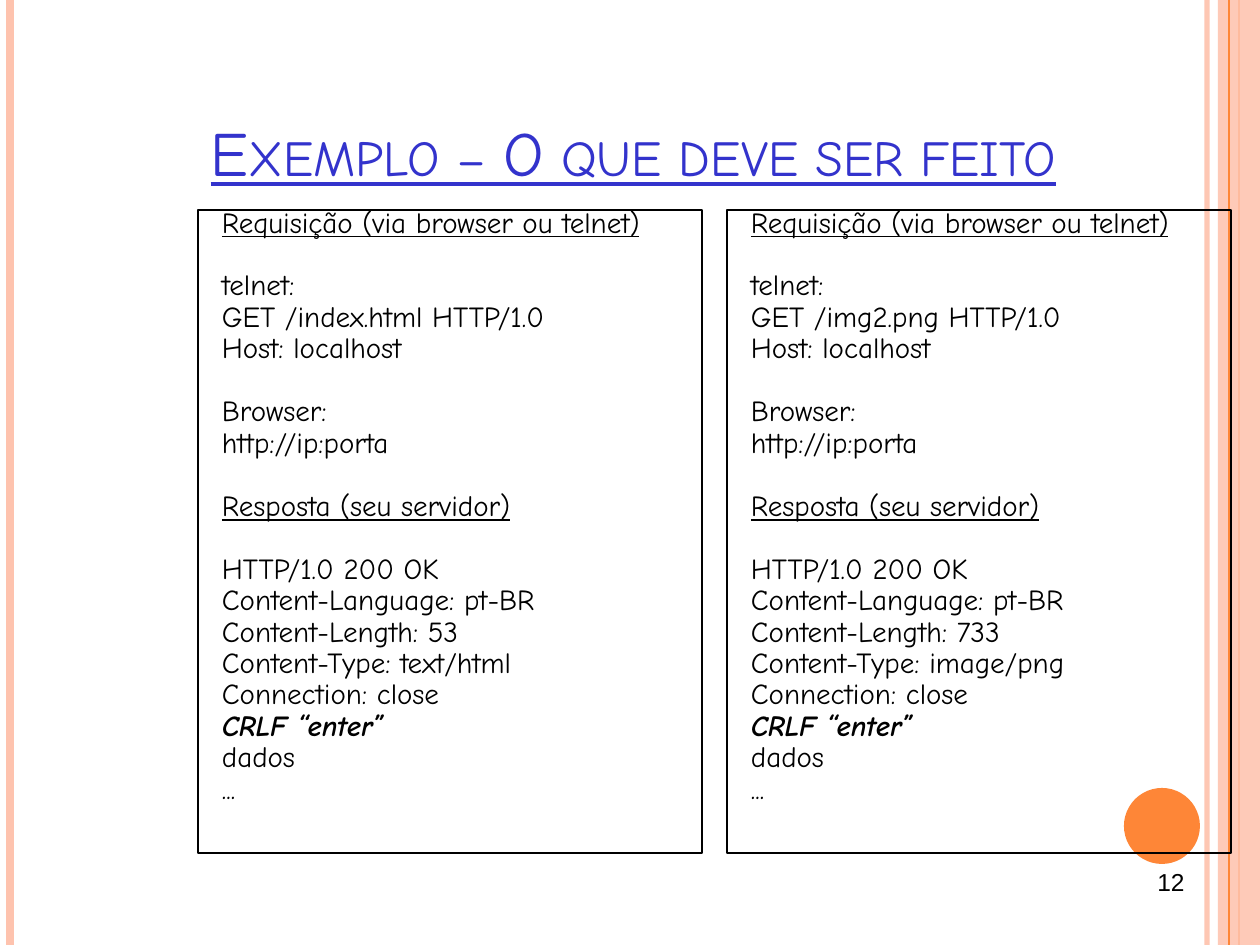
from lxml.etree import SubElement
from pptx import Presentation
from pptx.dml.color import RGBColor
from pptx.enum.shapes import MSO_CONNECTOR as CONNECTOR, MSO_SHAPE as SHAPE
from pptx.enum.text import MSO_ANCHOR as ANCHOR, MSO_AUTO_SIZE as AUTO_SIZE, PP_ALIGN as ALIGN
from pptx.oxml.ns import qn
from pptx.util import Emu, Inches, Pt

WIDTH, HEIGHT = 1260, 945
COLORS = {"peach": "FEC3AE", "orange": "FE8637", "title": "3333CC", "text": "000000"}
TITLE = {"name": "Comic Neue", "size": Pt(36), "underline": True}
BODY = {"name": "Comic Neue", "size": Pt(16.6)}
HEADING = {**BODY, "underline": True}
EMPHASIS = {**BODY, "bold": True, "italic": True}
NUMBER = {"name": "Arial", "size": Pt(14)}
LINE_GAP, BLOCK_GAP = 6, 24


def px(length):
    return Emu(round(length * Inches(1) / 126))


def exchange(file, size, kind):
    """Blocks of (text, font format) lines for one request and its response."""
    def plain(*lines):
        return [(line, BODY) for line in lines]

    return [
        [("Requisição (via browser ou telnet)", HEADING)],
        plain("telnet:", f"GET /{file} HTTP/1.0", "Host: localhost"),
        plain("Browser:", "http://ip:porta"),
        [("Resposta (seu servidor)", HEADING)],
        plain("HTTP/1.0 200 OK", "Content-Language: pt-BR", f"Content-Length: {size}",
              f"Content-Type: {kind}", "Connection: close")
        + [("CRLF “enter”", EMPHASIS)] + plain("dados", "..."),
    ]


class SlideBuilder:
    def __init__(self, presentation):
        self.slide = presentation.slides.add_slide(presentation.slide_layouts[3])
        self.shapes = self.slide.shapes

    def paint(self, color_format, color, alpha=None):
        color_format.rgb = RGBColor.from_string(COLORS[color])

    def set_alpha(self, shape, percent):
        color = shape._element.spPr.find(".//" + qn("a:srgbClr"))
        SubElement(color, qn("a:alpha"), val=str(percent * 1000))

    def place(self, shape, left, top, width, height):
        shape.left, shape.top = px(left), px(top)
        shape.width, shape.height = px(width), px(height)

    def vertical_line(self, x, color, weight, alpha=100):
        line = self.shapes.add_connector(CONNECTOR.STRAIGHT, px(x), 0, px(x), px(HEIGHT))
        self.paint(line.line.color, color)
        line.line.width = Pt(weight)
        if alpha < 100:
            self.set_alpha(line, alpha)
        SubElement(line._element.spPr, qn("a:effectLst"))

    def filled_shape(self, kind, box, color, alpha=100):
        shape = self.shapes.add_shape(kind, *map(px, box))
        shape.shadow.inherit = False
        shape.fill.solid()
        self.paint(shape.fill.fore_color, color)
        shape.line.fill.background()
        if alpha < 100:
            self.set_alpha(shape, alpha)

    def add_run(self, paragraph, text, font_format, color="text"):
        run = paragraph.add_run()
        run.text = text
        for name, value in font_format.items():
            setattr(run.font, name, value)
        self.paint(run.font.color, color)
        return run

    def title(self, text, box):
        title = self.shapes.title
        self.place(title, *box)
        frame = title.text_frame
        frame.auto_size, frame.vertical_anchor = AUTO_SIZE.NONE, ANCHOR.BOTTOM
        paragraph = frame.paragraphs[0]
        paragraph.alignment = ALIGN.LEFT
        run = self.add_run(paragraph, text, TITLE, "title")
        run._r.get_or_add_rPr().set("cap", "small")

    def body(self, index, blocks, box):
        body = self.slide.placeholders[index]
        self.place(body, *box)
        self.paint(body.line.color, "text")
        body.line.width = Pt(0.75)
        frame = body.text_frame
        frame.auto_size, frame.vertical_anchor = AUTO_SIZE.NONE, ANCHOR.TOP
        paragraph = frame.paragraphs[0]
        gap = 0
        for block in blocks:
            for text, font_format in block:
                if gap:
                    paragraph = frame.add_paragraph()
                properties = paragraph._p.get_or_add_pPr()
                properties.set("marL", str(Inches(0.4)))
                properties.set("indent", str(Inches(-0.31)))
                SubElement(properties, qn("a:buNone"))
                paragraph.line_spacing, paragraph.space_before = 0.6, Pt(gap)
                self.add_run(paragraph, text, font_format)
                gap = LINE_GAP
            gap = BLOCK_GAP

    def slide_number(self, text, box):
        frame = self.shapes.add_textbox(*map(px, box)).text_frame
        frame.word_wrap = True
        paragraph = frame.paragraphs[0]
        paragraph.alignment = ALIGN.RIGHT
        self.add_run(paragraph, text, NUMBER)


def main():
    presentation = Presentation()
    presentation.slide_width, presentation.slide_height = px(WIDTH), px(HEIGHT)
    builder = SlideBuilder(presentation)

    builder.vertical_line(1207, "peach", 3, alpha=93)
    builder.vertical_line(10, "peach", 4.5)
    builder.vertical_line(1239, "orange", 1.5)
    builder.filled_shape(SHAPE.RECTANGLE, (1218, 0, 42, HEIGHT), "peach", alpha=87)
    builder.vertical_line(1229, "orange", 0.75)
    builder.filled_shape(SHAPE.OVAL, (1124, 788, 76, 76), "orange")
    builder.slide_number("12", (903, 861, 294, 66))

    builder.title("Exemplo – O que deve ser feito", (198, 38, 1033, 157))
    exchanges = [("index.html", 53, "text/html"), ("img2.png", 733, "image/png")]
    for column, details in enumerate(exchanges):
        builder.body(column + 1, exchange(*details), (198 + 529 * column, 210, 504, 643))

    # Placeholders come first in the tree; the decoration belongs behind them.
    tree = builder.shapes._spTree
    for placeholder in list(builder.slide.placeholders):
        tree.append(placeholder._element)
    presentation.save("out.pptx")


if __name__ == "__main__":
    main()
